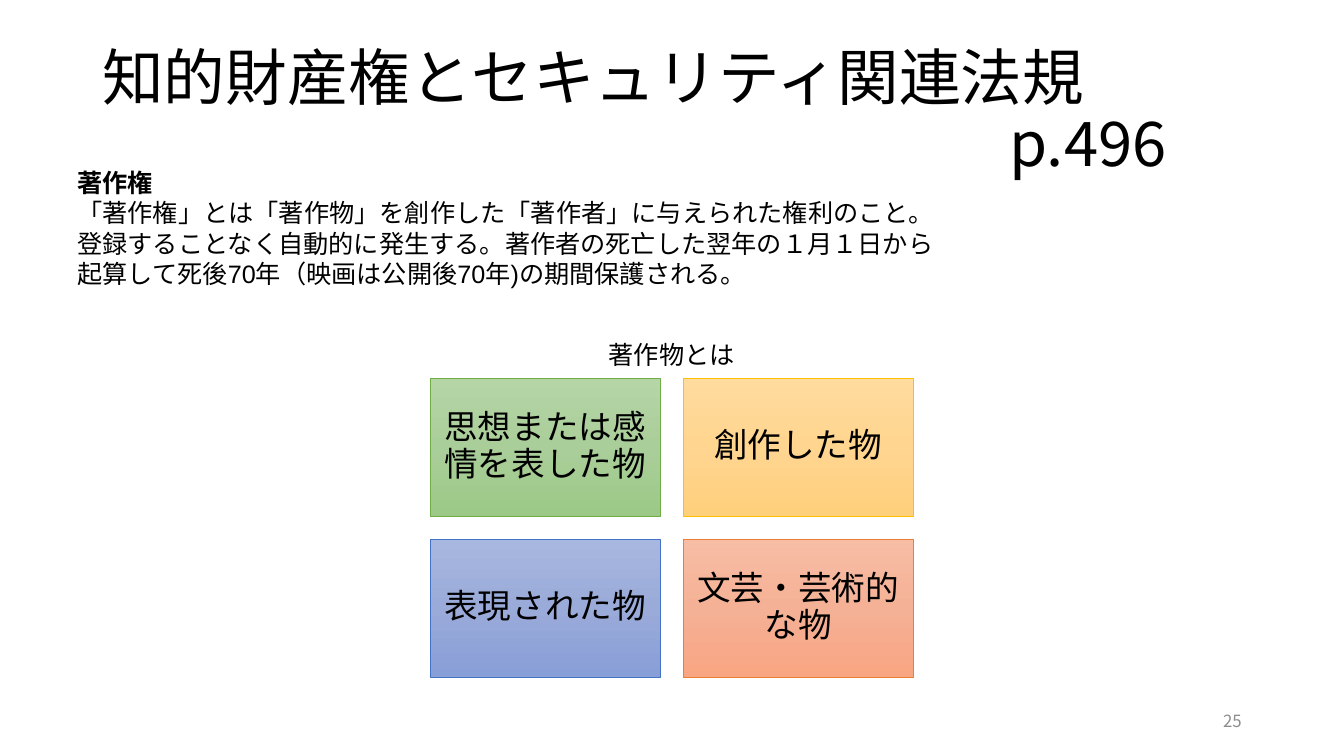
from copy import deepcopy
from dataclasses import dataclass

from lxml import etree
from pptx import Presentation
from pptx import util as u
from pptx.dml.color import RGBColor
from pptx.enum import shapes, text
from pptx.oxml.ns import qn


@dataclass(frozen=True)
class Theme:
    ink: str = "000000"
    muted: str = "8C8C8C"
    japanese: str = "Noto Sans CJK JP"
    latin: str = "Arial"
    title: int = 44
    tile: int = 24
    body: int = 18
    number: int = 12


@dataclass(frozen=True)
class Tile:
    label: str
    gradient: tuple[str, str, str]
    outline: str


THEME = Theme()
TILES = [
    Tile("思想または感情を表した物", ("B5D5A7", "AACE9A", "9CC987"), "70AD47"),
    Tile("創作した物", ("FFDB9E", "FFD590", "FFD07C"), "FFC000"),
    Tile("表現された物", ("A8B7DF", "9AABD9", "889ED7"), "4472C4"),
    Tile("文芸・芸術的な物", ("F7BDA5", "F5B196", "F8A582"), "ED7D31"),
]

# Tile grid, in points
GRID_LEFT, GRID_TOP = 307.2, 270
TILE_WIDTH, TILE_HEIGHT, TILE_GAP = 164.3, 98.6, 16.4
COLUMNS = 2


def write(box, lines: list[str], *, size: int, font: str = THEME.japanese,
          color: str = THEME.ink, align=text.PP_ALIGN.LEFT,
          anchor=text.MSO_ANCHOR.TOP, spacing: float = 1.0,
          bold_first: bool = False, last_indent: float = 0,
          inset: float = 3.6) -> None:
    """Fill a shape with one paragraph per line."""
    frame = box.text_frame
    frame.word_wrap = True
    frame.vertical_anchor = anchor
    frame.margin_top = frame.margin_bottom = u.Pt(inset)
    frame.margin_left = frame.margin_right = u.Pt(7.2)
    for index, line in enumerate(lines):
        para = frame.add_paragraph() if index else frame.paragraphs[0]
        para.alignment = align
        para.line_spacing = spacing
        span = para.add_run()
        span.text = line
        span.font.size = u.Pt(size)
        span.font.name = font
        span.font.bold = bold_first and index == 0
        span.font.color.rgb = RGBColor.from_string(color)
        east_asian = etree.SubElement(span.font._element, qn("a:ea"))
        east_asian.set("typeface", THEME.japanese)
    if last_indent:
        para._p.get_or_add_pPr().set("marL", str(u.Pt(last_indent)))


def add_text(page, left: float, top: float, width: float, height: float,
             lines: list[str], **style) -> None:
    box = page.shapes.add_textbox(u.Pt(left), u.Pt(top), u.Pt(width), u.Pt(height))
    write(box, lines, **style)


def add_tile(page, tile: Tile, left: float, top: float) -> None:
    box = page.shapes.add_shape(shapes.MSO_SHAPE.RECTANGLE, u.Pt(left), u.Pt(top),
                                u.Pt(TILE_WIDTH), u.Pt(TILE_HEIGHT))
    box.shadow.inherit = False
    box.fill.gradient()
    box.fill.gradient_angle = 270
    # A third stop goes between the two default ones
    stops = box._element.spPr.find(".//" + qn("a:gsLst"))
    stops.insert(1, deepcopy(stops[0]))
    for index, (stop, color) in enumerate(zip(box.fill.gradient_stops, tile.gradient)):
        stop.position = index / 2
        stop.color.rgb = RGBColor.from_string(color)
    box.line.color.rgb = RGBColor.from_string(tile.outline)
    box.line.width = u.Pt(0.5)
    write(box, [tile.label], size=THEME.tile, align=text.PP_ALIGN.CENTER,
          anchor=text.MSO_ANCHOR.MIDDLE, spacing=0.9, inset=7.2)


def main() -> None:
    deck = Presentation()
    deck.slide_width, deck.slide_height = u.Pt(960), u.Pt(540)
    page = deck.slides.add_slide(deck.slide_layouts[6])

    # Title with page reference
    add_text(page, 66, 28.8, 828, 104.4,
             ["知的財産権とセキュリティ関連法規", "p.496"], size=THEME.title,
             anchor=text.MSO_ANCHOR.MIDDLE, spacing=0.9, last_indent=648)

    # Slide number
    add_text(page, 678, 500.5, 216, 28.8, ["25"], size=THEME.number,
             color=THEME.muted, align=text.PP_ALIGN.RIGHT,
             anchor=text.MSO_ANCHOR.MIDDLE)

    # Explanation of copyright
    add_text(page, 48.2, 116, 863.3, 94.3, [
        "著作権",
        "「著作権」とは「著作物」を創作した「著作者」に与えられた権利のこと。",
        "登録することなく自動的に発生する。著作者の死亡した翌年の１月１日から",
        "起算して死後70年（映画は公開後70年)の期間保護される。",
    ], size=THEME.body, font=THEME.latin, bold_first=True)

    # Four conditions of a work
    for index, tile in enumerate(TILES):
        row, column = divmod(index, COLUMNS)
        add_tile(page, tile, GRID_LEFT + column * (TILE_WIDTH + TILE_GAP),
                 GRID_TOP + row * (TILE_HEIGHT + TILE_GAP))

    # Caption above the grid
    add_text(page, 303, 239, 353.5, 29, ["著作物とは"], size=THEME.body,
             font=THEME.latin, align=text.PP_ALIGN.CENTER)

    deck.save("out.pptx")


if __name__ == "__main__":
    main()
